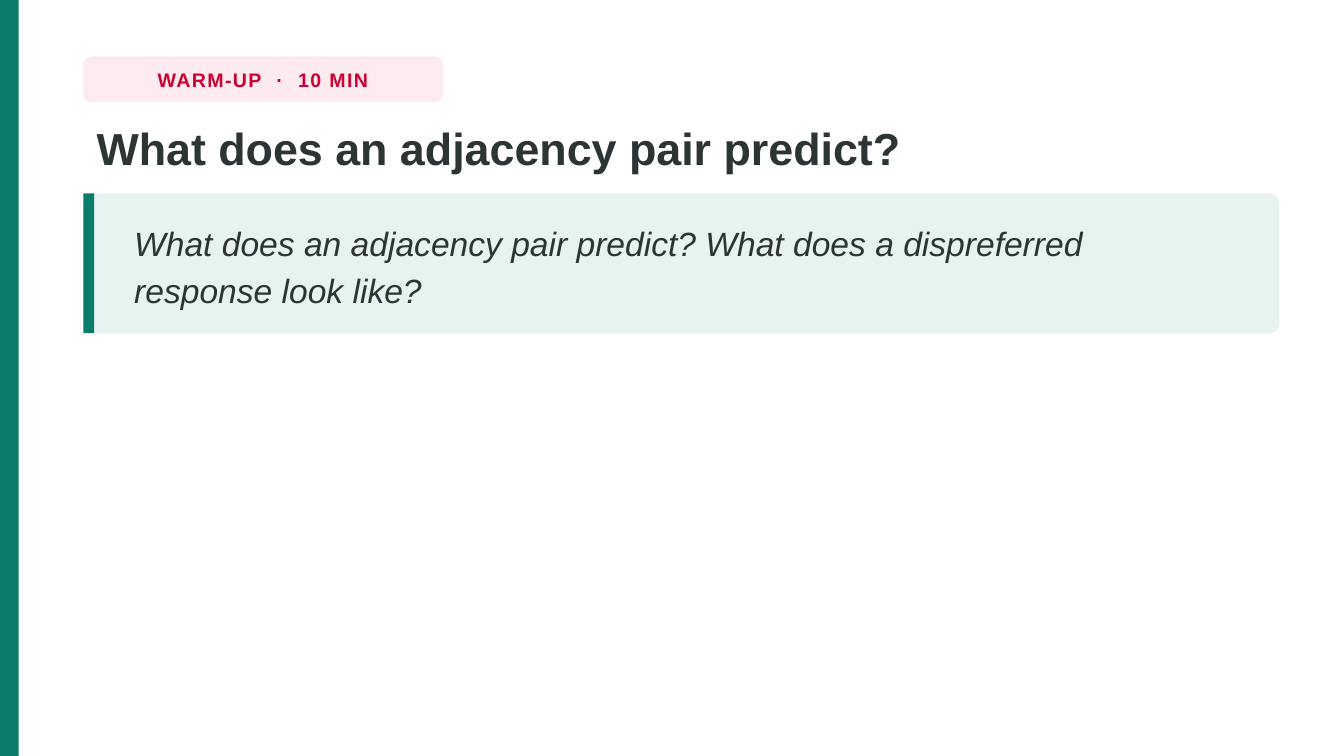
from pptx import Presentation
from pptx.dml.color import RGBColor
from pptx.enum.shapes import MSO_SHAPE
from pptx.enum.text import MSO_ANCHOR, PP_ALIGN
from pptx.util import Emu, Pt

RECT, ROUNDED = MSO_SHAPE.RECTANGLE, MSO_SHAPE.ROUNDED_RECTANGLE
TOP, MIDDLE = MSO_ANCHOR.TOP, MSO_ANCHOR.MIDDLE
LEFT, CENTER = PP_ALIGN.LEFT, PP_ALIGN.CENTER

WHITE = RGBColor(0xFF, 0xFF, 0xFF)
TEAL = RGBColor(0x0B, 0x7B, 0x6B)
MINT = RGBColor(0xE6, 0xF3, 0xF0)
ROSE = RGBColor(0xFD, 0xEA, 0xEF)
CRIMSON = RGBColor(0xCC, 0x00, 0x33)
INK = RGBColor(0x2D, 0x34, 0x36)

PX = 4572  # EMU per px, 200 px to the inch
WIDTH, HEIGHT = 2000, 1125
MARGIN, CONTENT_WIDTH = 124, 1780


def px(*lengths):
    return [Emu(length * PX) for length in lengths]


class SlideBuilder:
    font_name = "Arial"

    def __init__(self, slide):
        self.slide = slide
        fill = slide.background.fill
        fill.solid()
        fill.fore_color.rgb = WHITE

    def panel(self, area, color, radius=0):
        kind = ROUNDED if radius else RECT
        shape = self.slide.shapes.add_shape(kind, *px(*area))
        shape.shadow.inherit = False
        shape.fill.solid()
        shape.fill.fore_color.rgb = color
        shape.line.fill.background()
        if radius:
            shape.adjustments[0] = radius / min(area[2:])

    def text(self, area, words, size, color, bold=False, italic=False, align=LEFT,
             anchor=TOP, line_spacing=None, tracking=None, wrap=True):
        box = self.slide.shapes.add_textbox(*px(*area))
        frame = box.text_frame
        frame.word_wrap = wrap
        frame.vertical_anchor = anchor
        para = frame.paragraphs[0]
        para.alignment = align
        para.line_spacing = line_spacing
        span = para.add_run()
        span.text = words
        font = span.font
        font.name, font.size = self.font_name, Pt(size)
        font.bold, font.italic = bold, italic
        font.color.rgb = color
        if tracking:
            span._r.get_or_add_rPr().set("spc", str(round(tracking * 100)))


def main():
    deck = Presentation()
    deck.slide_width, deck.slide_height = px(WIDTH, HEIGHT)
    page = SlideBuilder(deck.slides.add_slide(deck.slide_layouts[6]))

    # Side band
    page.panel((0, 0, 28, HEIGHT), TEAL)

    # Activity badge
    badge = (MARGIN, 84, 535, 68)
    page.panel(badge, ROSE, radius=12)
    page.text(badge, "WARM-UP  ·  10 MIN", 10.5, CRIMSON, bold=True, align=CENTER,
              anchor=MIDDLE, tracking=0.8, wrap=False)

    # Title
    page.text((MARGIN, 168, CONTENT_WIDTH, 112), "What does an adjacency pair predict?",
              24, INK, bold=True, line_spacing=1.02)

    # Question card with accent bar
    card_top, card_height = 288, 208
    page.panel((MARGIN, card_top, CONTENT_WIDTH, card_height), MINT, radius=14)
    page.panel((MARGIN, card_top, 16, card_height), TEAL)
    page.text((MARGIN + 56, card_top + 10, 1670, card_height - 20),
              "What does an adjacency pair predict? "
              "What does a dispreferred response look like?",
              18, INK, italic=True, anchor=MIDDLE, line_spacing=1.16)

    deck.save("out.pptx")


if __name__ == "__main__":
    main()
